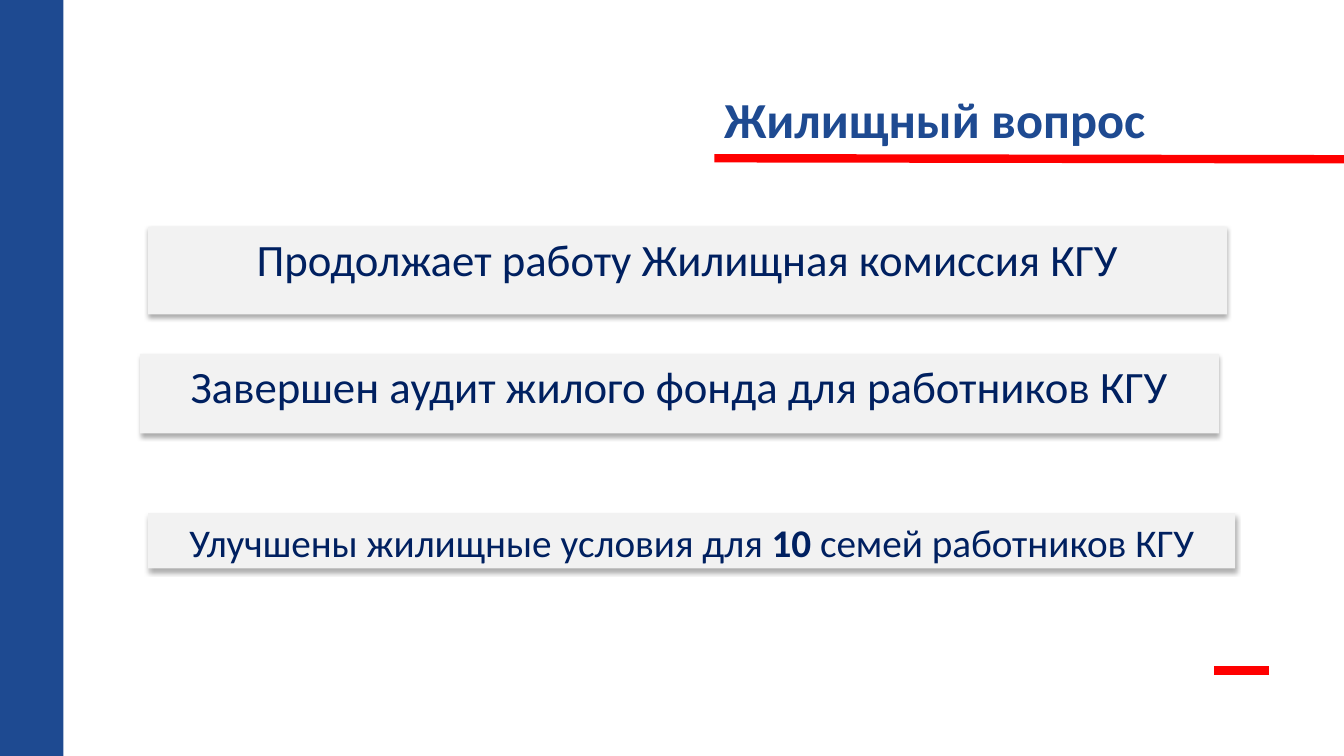
from dataclasses import dataclass

from lxml.etree import SubElement
from pptx import Presentation
from pptx.dml.color import RGBColor
from pptx.enum.shapes import MSO_CONNECTOR, MSO_SHAPE
from pptx.enum.text import MSO_ANCHOR, MSO_AUTO_SIZE, PP_ALIGN
from pptx.oxml.ns import qn
from pptx.util import Inches, Pt


@dataclass(frozen=True)
class Theme:
    font: str = "Calibri"
    blue: str = "1E4A91"
    navy: str = "002060"
    red: str = "FF0000"
    panel: str = "F2F2F2"
    shadow: str = "000000"
    title_size: int = 36
    statement_size: int = 32
    result_size: int = 28
    rule_width: int = 6


class SlideBuilder:
    def __init__(self, presentation, theme):
        self.theme = theme
        self.slide = presentation.slides.add_slide(presentation.slide_layouts[5])

    def style_run(self, run, size, color, bold=False):
        run.font.name = self.theme.font
        run.font.size = Pt(size)
        run.font.bold = bold
        run.font.color.rgb = RGBColor.from_string(color)

    def title(self, text, left, top, width, height):
        title = self.slide.shapes.title
        title.left, title.top = Inches(left), Inches(top)
        title.width, title.height = Inches(width), Inches(height)
        text_frame = title.text_frame
        text_frame.text = text
        text_frame.word_wrap = True
        text_frame.auto_size = MSO_AUTO_SIZE.NONE
        text_frame.vertical_anchor = MSO_ANCHOR.BOTTOM
        paragraph = text_frame.paragraphs[0]
        paragraph.alignment = PP_ALIGN.LEFT
        paragraph.line_spacing = 0.9
        self.style_run(paragraph.runs[0], self.theme.title_size, self.theme.blue, True)

    def rule(self, start_x, start_y, end_x, end_y):
        connector = self.slide.shapes.add_connector(
            MSO_CONNECTOR.STRAIGHT,
            Inches(start_x), Inches(start_y), Inches(end_x), Inches(end_y))
        connector.line.color.rgb = RGBColor.from_string(self.theme.red)
        connector.line.width = Pt(self.theme.rule_width)
        SubElement(connector.element.spPr, qn("a:effectLst"))

    def rectangle(self, left, top, width, height, fill):
        shape = self.slide.shapes.add_shape(
            MSO_SHAPE.RECTANGLE,
            Inches(left), Inches(top), Inches(width), Inches(height))
        shape.fill.solid()
        shape.fill.fore_color.rgb = RGBColor.from_string(fill)
        shape.line.fill.background()
        shape.shadow.inherit = False
        return shape

    def cast_shadow(self, shape):
        effects = shape.element.spPr.find(qn("a:effectLst"))
        shadow = SubElement(
            effects, qn("a:outerShdw"), blurRad=str(Pt(3.5)), dist=str(Pt(2.2)),
            dir="5400000", algn="ctr", rotWithShape="0")
        color = SubElement(shadow, qn("a:srgbClr"), val=self.theme.shadow)
        SubElement(color, qn("a:alpha"), val="32000")

    def panel(self, left, top, width, height, size, parts):
        shape = self.rectangle(left, top, width, height, self.theme.panel)
        self.cast_shadow(shape)
        text_frame = shape.text_frame
        text_frame.word_wrap = True
        text_frame.vertical_anchor = MSO_ANCHOR.TOP
        paragraph = text_frame.paragraphs[0]
        paragraph.alignment = PP_ALIGN.CENTER
        for text, bold in parts:
            run = paragraph.add_run()
            run.text = text
            self.style_run(run, size, self.theme.navy, bold)


def main():
    presentation = Presentation()
    presentation.slide_width = Inches(13.34)
    presentation.slide_height = Inches(7.5)
    theme = Theme()
    builder = SlideBuilder(presentation, theme)

    builder.rule(7.09, 1.57, 13.34, 1.58)
    builder.rule(12.05, 6.65, 12.6, 6.65)
    builder.rectangle(0, 0, 0.63, 7.5, theme.blue)
    builder.title("Жилищный вопрос", 7.09, 0, 5.8, 1.53)

    builder.panel(1.47, 2.25, 10.71, 0.87, theme.statement_size,
                  [("Продолжает работу Жилищная комиссия КГУ", False)])
    builder.panel(1.39, 3.51, 10.71, 0.79, theme.statement_size,
                  [("Завершен аудит жилого фонда для работников КГУ", False)])
    builder.panel(1.47, 5.09, 10.79, 0.55, theme.result_size,
                  [("Улучшены жилищные условия для ", False),
                   ("10 ", True),
                   ("семей работников КГУ", False)])

    presentation.save("out.pptx")


if __name__ == "__main__":
    main()
